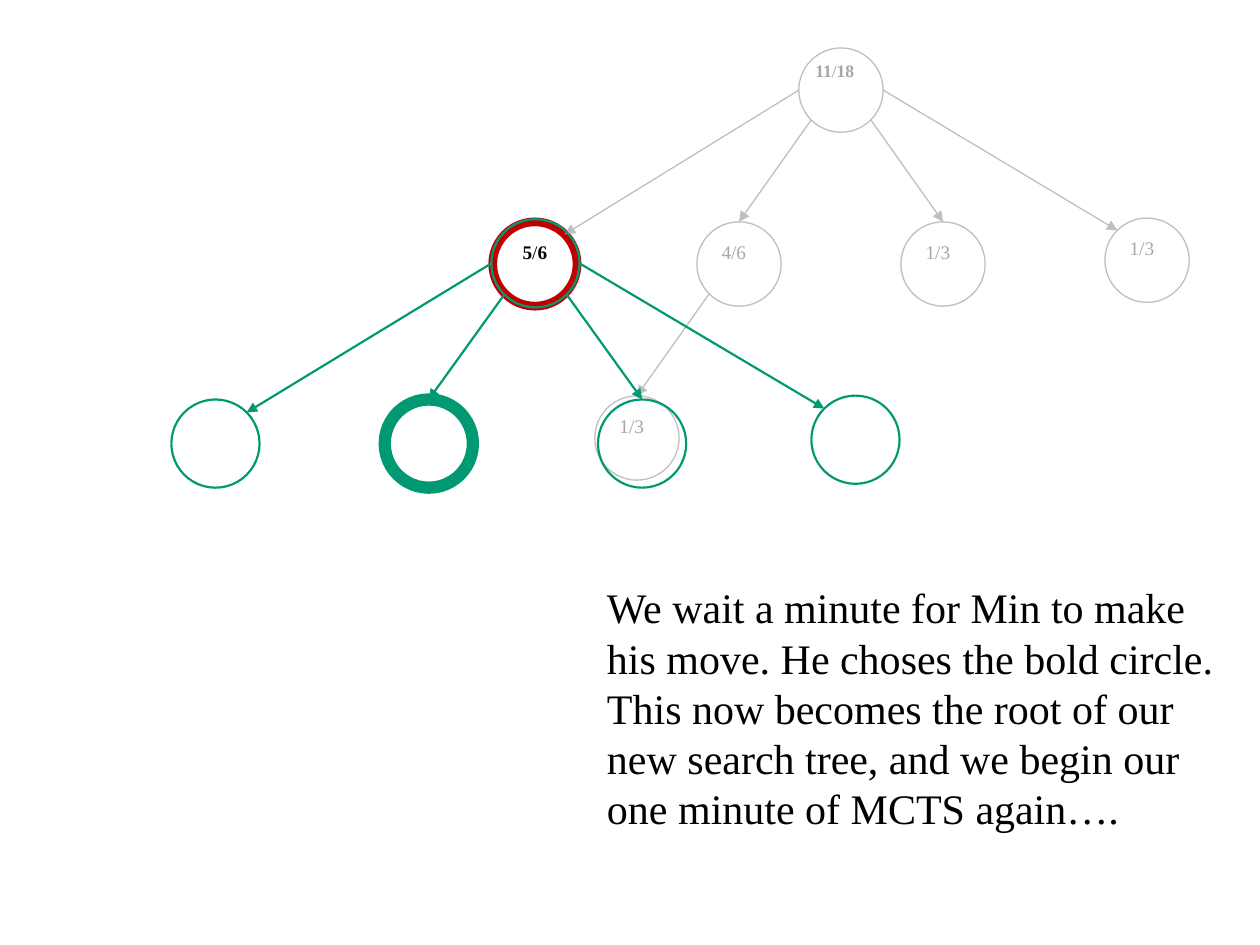
from math import cos, radians, sin

from lxml.etree import SubElement
from pptx import Presentation
from pptx.dml.color import RGBColor as RGB
from pptx.enum.shapes import MSO_CONNECTOR as CONN, MSO_SHAPE as SHAPE
from pptx.enum.text import MSO_ANCHOR as ANCHOR, PP_ALIGN as ALIGN
from pptx.oxml.ns import qn
from pptx.util import Pt

ROOT_LABEL = "11/18"
CHILD_LABELS = ["5/6", "4/6", "1/3", "1/3"]
GRANDCHILD_LABEL = "1/3"
CAPTION = [
    "We wait a minute for Min to make his move. He choses the bold circle.",
    "This now becomes the root of our new search tree, and we begin our one minute of MCTS again….",
]

THEME = {
    "font": "Times New Roman",
    "old": RGB.from_string("BFBFBF"),
    "faded": RGB.from_string("A6A6A6"),
    "chosen": RGB.from_string("C00000"),
    "new": RGB.from_string("009973"),
    "ink": RGB.from_string("000000"),
    "root_size": 10,
    "node_size": 11,
    "caption_size": 24,
    "old_width": 0.75,
    "new_width": 1.25,
    "chosen_width": 5,
    "bold_width": 7,
}

OLD_ROOT, OLD_D, OLD_PITCH, OLD_DROP = (480.6, 51.5), 48.2, 116.6, 99.4
NEW_ROOT, NEW_D, NEW_PITCH, NEW_DROP = (306, 150.5), 50.4, 121.9, 103
LAST_RAISE = 2.2
SLOTS = [-1.5, -0.5, 0.5, 1.5]
EDGE_ANGLES = [(180, -45), (135, -90), (45, -90), (0, -135)]

prs = Presentation()
prs.slide_width, prs.slide_height = Pt(720), Pt(540)
s = prs.slides.add_slide(prs.slide_layouts[6])


def fan(parent, pitch, drop):
    x, y = parent
    return [(x + slot * pitch, y + drop - (LAST_RAISE if slot == SLOTS[-1] else 0))
            for slot in SLOTS]


def rim(center, diameter, angle):
    a = radians(angle)
    return (center[0] + diameter / 2 * cos(a), center[1] + diameter / 2 * sin(a))


def style_run(r, size, color, bold=False):
    r.font.name, r.font.size, r.font.bold = THEME["font"], Pt(size), bold
    r.font.color.rgb = color


def add_node(center, diameter, color, width):
    left, top = (c - diameter / 2 for c in center)
    sp = s.shapes.add_shape(SHAPE.OVAL, Pt(left), Pt(top), Pt(diameter), Pt(diameter))
    sp.shadow.inherit = False
    sp.fill.background()
    sp.line.color.rgb, sp.line.width = color, Pt(width)
    return sp


def add_label(sp, text, size, color, bold=False):
    tf = sp.text_frame
    tf.vertical_anchor = ANCHOR.TOP
    p = tf.paragraphs[0]
    p.alignment = ALIGN.CENTER if bold else ALIGN.LEFT
    for part in text.partition("/") if bold else [text]:
        r = p.add_run()
        r.text = part
        style_run(r, size, color, bold and part != "/")
    return tf


def add_edge(parent, child, diameter, angles, color, width):
    start, end = rim(parent, diameter, angles[0]), rim(child, diameter, angles[1])
    line = s.shapes.add_connector(CONN.STRAIGHT, *(Pt(v) for v in start + end))
    line.line.color.rgb, line.line.width = color, Pt(width)
    SubElement(line.line._get_or_add_ln(), qn("a:tailEnd"), type="triangle")
    SubElement(line._element.spPr, qn("a:effectLst"))


old_style = (THEME["old"], THEME["old_width"])
tf = add_label(add_node(OLD_ROOT, OLD_D, *old_style),
               ROOT_LABEL, THEME["root_size"], THEME["faded"], True)
tf.margin_left = tf.margin_top = 0

children = fan(OLD_ROOT, OLD_PITCH, OLD_DROP)
for i, (center, label) in enumerate(zip(children, CHILD_LABELS)):
    chosen = i == 0
    style = (THEME["chosen"], THEME["chosen_width"]) if chosen else old_style
    add_label(add_node(center, OLD_D, *style), label, THEME["node_size"],
              THEME["ink" if chosen else "faded"], chosen)
for center, angles in zip(children, EDGE_ANGLES):
    add_edge(OLD_ROOT, center, OLD_D, angles, *old_style)

grandchild = fan(children[1], OLD_PITCH, OLD_DROP)[1]
add_label(add_node(grandchild, OLD_D, *old_style),
          GRANDCHILD_LABEL, THEME["node_size"], THEME["faded"])
add_edge(children[1], grandchild, OLD_D, EDGE_ANGLES[1], *old_style)

new_style = (THEME["new"], THEME["new_width"])
add_node(NEW_ROOT, NEW_D, *new_style)
moves = fan(NEW_ROOT, NEW_PITCH, NEW_DROP)
for i, center in enumerate(moves):
    add_node(center, NEW_D, THEME["new"], THEME["bold_width" if i == 1 else "new_width"])
for center, angles in zip(moves, EDGE_ANGLES):
    add_edge(NEW_ROOT, center, NEW_D, angles, *new_style)

tf = s.shapes.add_textbox(Pt(339.8), Pt(327.6), Pt(372.2), Pt(152.6)).text_frame
tf.word_wrap = True
tf.margin_top = Pt(5)
tf.text = "\n".join(CAPTION)
for p in tf.paragraphs:
    p.line_spacing = Pt(28.7)
    style_run(p.runs[0], THEME["caption_size"], THEME["ink"])

prs.save("out.pptx")
